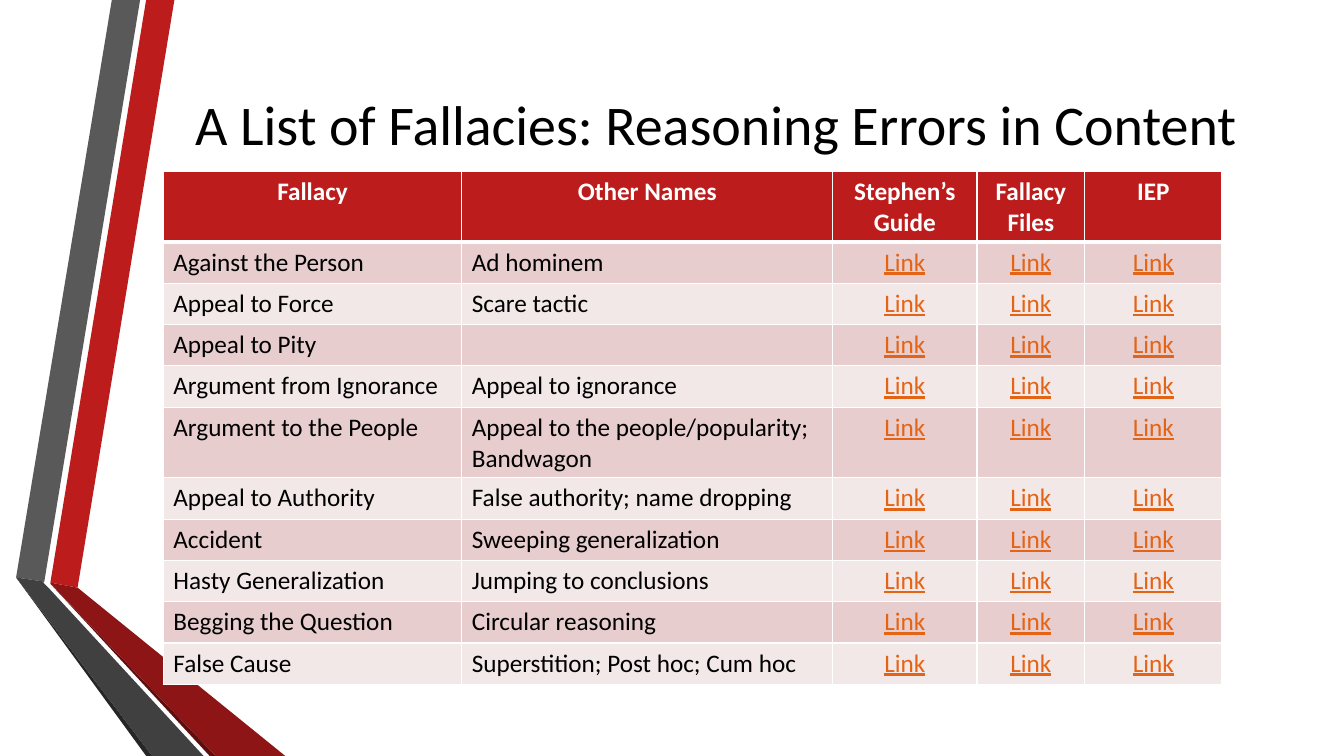
from lxml.etree import SubElement
from pptx import Presentation
from pptx.dml.color import RGBColor
from pptx.enum.text import MSO_ANCHOR as Anchor, PP_ALIGN as Align
from pptx.oxml.ns import qn
from pptx.util import Pt

PX = 9144
BLACK, WHITE, RED, LINK = "000000", "FFFFFF", "BC1C1C", "E46416"
BANDS = ("E7CDCD", "F3E8E8")

RIBBONS = [
    (RED, [(50, 578), (77, 583), (173, 0), (145, 0)]),
    ("595959", [(139, 0), (111, 0), (16, 573), (44, 577)]),
    ("262626", [(16, 573), (145, 750), (151, 750)]),
    ("5E0E0E", [(50, 579), (208, 750), (214, 750)]),
    ("8D1515", [(50, 579), (214, 750), (283, 750), (77, 583), (50, 578)]),
    ("404040", [(202, 750), (48, 583), (43, 578), (44, 577), (16, 573), (151, 750)]),
]
COLUMNS = [296, 368, 143, 107, 136]
HEADER = ["Fallacy", "Other Names", "Stephen’s Guide", "Fallacy Files", "IEP"]
FALLACIES = [
    ("Against the Person", "Ad hominem"),
    ("Appeal to Force", "Scare tactic"),
    ("Appeal to Pity", ""),
    ("Argument from Ignorance", "Appeal to ignorance"),
    ("Argument to the People", "Appeal to the people/popularity; Bandwagon"),
    ("Appeal to Authority", "False authority; name dropping"),
    ("Accident", "Sweeping generalization"),
    ("Hasty Generalization", "Jumping to conclusions"),
    ("Begging the Question", "Circular reasoning"),
    ("False Cause", "Superstition; Post hoc; Cum hoc"),
]


def rgb(color):
    """Turn a hex string into a colour."""
    return RGBColor.from_string(color)


class Painter:
    """Draws styled elements on the current page, measured in px."""

    font = "Calibri"

    def __init__(self, page):
        """Keep the page to draw on."""
        self.page = page

    def ribbon(self, color, points):
        """Draw a filled polygon without an outline."""
        builder = self.page.shapes.build_freeform(*points[0], scale=PX)
        builder.add_line_segments(points[1:], close=True)
        shape = builder.convert_to_shape()
        shape.shadow.inherit = False
        shape.fill.solid()
        shape.fill.fore_color.rgb = rgb(color)
        shape.line.fill.background()

    def label(self, frame, text, size, color, align, bold=False, underline=False):
        """Set the text of a frame and format its runs."""
        frame.text = text
        frame.word_wrap = True
        para = frame.paragraphs[0]
        para.alignment = align
        para.font.size = Pt(size)
        for span in para.runs:
            font = span.font
            font.name, font.size = self.font, Pt(size)
            font.bold, font.underline = bold, underline
            font.color.rgb = rgb(color)

    def title(self, text, left, top, width, height):
        """Add a centred title."""
        box = self.page.shapes.add_textbox(left * PX, top * PX, width * PX, height * PX)
        box.text_frame.vertical_anchor = Anchor.MIDDLE
        self.label(box.text_frame, text, 40, BLACK, Align.CENTER)

    def cell(self, cell, text, fill, top=1, bottom=1, **style):
        """Fill one table cell with text, white borders and a background."""
        self.label(cell.text_frame, text, 18, **style)
        properties = cell._tc.get_or_add_tcPr()
        for side, points in (("L", 1), ("R", 1), ("T", top), ("B", bottom)):
            line = SubElement(properties, qn(f"a:ln{side}"), w=str(Pt(points)))
            solid = SubElement(line, qn("a:solidFill"))
            SubElement(solid, qn("a:srgbClr"), val=WHITE)
        cell.fill.solid()
        cell.fill.fore_color.rgb = rgb(fill)

    def table(self, left, top, row_height):
        """Add the table of fallacies with a header and banded rows."""
        count = len(FALLACIES) + 1
        table = self.page.shapes.add_table(
            count, len(COLUMNS), left * PX, top * PX,
            sum(COLUMNS) * PX, count * row_height * PX).table
        for column, width in zip(table.columns, COLUMNS):
            column.width = width * PX
        for row in table.rows:
            row.height = row_height * PX
        for cell, name in zip(table.rows[0].cells, HEADER):
            self.cell(cell, name, RED, bottom=3, color=WHITE, align=Align.CENTER, bold=True)
        for index, names in enumerate(FALLACIES):
            texts = [*names, "Link", "Link", "Link"]
            for column, text in enumerate(texts):
                linked = column >= len(names)
                self.cell(table.cell(index + 1, column), text, BANDS[index % 2],
                          top=1 if index else 3, underline=linked,
                          color=LINK if linked else BLACK,
                          align=Align.CENTER if linked else Align.LEFT)


def main():
    """Build the page and save the deck."""
    deck = Presentation()
    deck.slide_width, deck.slide_height = 1333 * PX, 750 * PX
    painter = Painter(deck.slides.add_slide(deck.slide_layouts[6]))
    for color, points in RIBBONS:
        painter.ribbon(color, points)
    painter.title("A List of Fallacies: Reasoning Errors in Content", 162, 75, 1096, 95)
    painter.table(162, 170, 41)
    deck.save("out.pptx")


if __name__ == "__main__":
    main()
